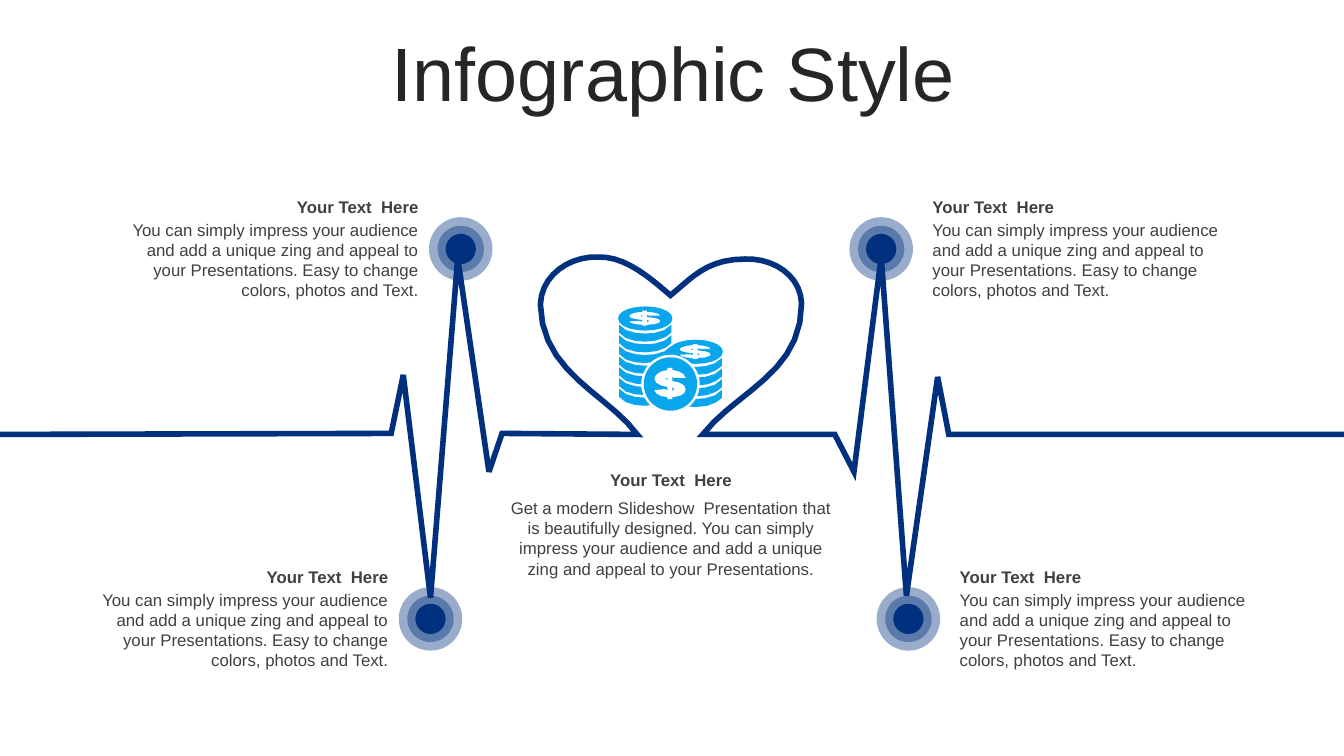
from dataclasses import dataclass

from lxml.etree import SubElement
from pptx import Presentation
from pptx.dml.color import RGBColor
from pptx.enum.shapes import MSO_SHAPE
from pptx.enum.text import MSO_ANCHOR, MSO_AUTO_SIZE, PP_ALIGN
from pptx.oxml.ns import qn
from pptx.util import Inches, Pt


@dataclass(frozen=True)
class Theme:
    """Colours, font and type sizes of the slide."""
    navy: RGBColor = RGBColor(0x00, 0x30, 0x7E)
    sky: RGBColor = RGBColor(0x0A, 0xA6, 0xED)
    white: RGBColor = RGBColor(0xFF, 0xFF, 0xFF)
    title: RGBColor = RGBColor(0x26, 0x26, 0x26)
    text: RGBColor = RGBColor(0x40, 0x40, 0x40)
    font: str = "Arial"
    title_size: int = 54
    text_size: int = 12
    pulse_width: int = 4


T = Theme()
HEADING = "Your Text  Here"
NOTE = ("You can simply impress your audience and add a unique zing and appeal "
        "to your Presentations. Easy to change colors, photos and Text.")
SUMMARY = ("Get a modern Slideshow  Presentation that is beautifully designed. "
           "You can simply impress your audience and add a unique zing and appeal "
           "to your Presentations.")

PULSE = [
    (-0.01, 4.31), (3.88, 4.3), (4, 3.72), (4.27, 5.93), (4.54, 2.56),
    (4.85, 4.68), (4.98, 4.3), (6.32, 4.31),
    (6.03, 3.91, 5.37, 3.7, 5.36, 3.02), (5.37, 2.72, 5.66, 2.54, 5.93, 2.55),
    (6.21, 2.54, 6.46, 2.77, 6.65, 2.93), (6.85, 2.77, 7, 2.57, 7.39, 2.57),
    (7.67, 2.56, 7.94, 2.73, 7.95, 3.01), (7.95, 3.7, 7.31, 3.88, 6.97, 4.31),
    (8.28, 4.31), (8.47, 4.68), (8.74, 2.55), (8.99, 5.91), (9.3, 3.74),
    (9.41, 4.31), (13.33, 4.31),
]
RIM = [
    (-0.26, 0), (-0.21, 0.07, -0.09, 0.09, 0, 0.09),
    (0.09, 0.09, 0.21, 0.07, 0.26, 0), (0.26, 0.08),
    (0.21, 0.13, 0.13, 0.17, 0, 0.17), (-0.1, 0.17, -0.21, 0.15, -0.26, 0.08),
]
COIN_TOP = [
    (0, -0.12), (0.15, -0.12, 0.27, -0.07, 0.27, 0), (0.27, 0.07, 0.15, 0.12, 0, 0.12),
    (-0.15, 0.12, -0.27, 0.07, -0.27, 0), (-0.27, -0.07, -0.15, -0.12, 0, -0.12),
]
DOLLAR = [
    [(-0.03, -0.16), (-0.03, -0.14), (-0.11, -0.13, -0.16, -0.09, -0.16, -0.05),
     (-0.16, -0.01, -0.1, 0.02, -0.03, 0.03), (-0.03, 0.07), (-0.05, 0.05),
     (-0.16, 0.06), (-0.16, 0.09, -0.1, 0.13, -0.03, 0.13), (-0.03, 0.15),
     (0.02, 0.15), (0.02, 0.13), (0.1, 0.13, 0.16, 0.09, 0.15, 0.05),
     (0.15, 0.01, 0.1, -0.02, 0.02, -0.03), (0.02, -0.07), (0.04, -0.06),
     (0.15, -0.06), (0.15, -0.1, 0.09, -0.13, 0.02, -0.14), (0.02, -0.16)],
    [(-0.03, -0.07), (-0.03, -0.04), (-0.05, -0.05)],
    [(0.02, 0.03), (0.04, 0.05), (0.02, 0.07)],
]


def flatten(contour, steps):
    """Turn line ends and cubic curves into a list of points."""
    points = []
    for step in contour:
        if len(step) == 2:
            points.append(step)
            continue
        (x0, y0), (x1, y1, x2, y2, x3, y3) = points[-1], step
        for i in range(1, steps + 1):
            t = i / steps
            a, b, c, d = (1 - t) ** 3, 3 * t * (1 - t) ** 2, 3 * t * t * (1 - t), t ** 3
            points.append((a * x0 + b * x1 + c * x2 + d * x3,
                           a * y0 + b * y1 + c * y2 + d * y3))
    return points


def shift(points, dy=0, squash=1):
    """Squash points upright and move them down."""
    return [(x, y * squash + dy) for x, y in points]


def add_outline(slide, contours, x=0, y=0, close=True):
    """Add one freeform made of point lists placed around a point."""
    builder = None
    for contour in contours:
        points = [(Inches(x + px), Inches(y + py)) for px, py in contour]
        if builder is None:
            builder = slide.shapes.build_freeform(*points[0], scale=1.0)
        else:
            builder.move_to(*points[0])
        builder.add_line_segments(points[1:], close=close)
    sp = builder.convert_to_shape()
    sp.shadow.inherit = False
    return sp


def paint(sp, color, alpha=None):
    """Give a shape a plain fill without a line."""
    sp.fill.solid()
    sp.fill.fore_color.rgb = color
    sp.line.fill.background()
    if alpha is not None:
        clr = sp.fill._xPr.find(qn("a:solidFill"))[0]
        SubElement(clr, qn("a:alpha")).set("val", str(alpha * 1000))


def add_disc(slide, cx, cy, size, color, alpha=None):
    """Add a filled circle around a centre."""
    sp = slide.shapes.add_shape(MSO_SHAPE.OVAL, Inches(cx - size / 2),
                                Inches(cy - size / 2), Inches(size), Inches(size))
    sp.shadow.inherit = False
    paint(sp, color, alpha)


def add_run(p, text, size, color, bold=False):
    """Add one formatted run to a paragraph."""
    r = p.add_run()
    r.text = text
    r.font.name, r.font.size, r.font.bold = T.font, Pt(size), bold
    r.font.color.rgb = color


def add_title(slide, x, y, w, h):
    """Fill and place the title placeholder."""
    sp = slide.shapes.title
    sp.left, sp.top, sp.width, sp.height = (Inches(v) for v in (x, y, w, h))
    tf = sp.text_frame
    tf.auto_size = MSO_AUTO_SIZE.NONE
    tf.vertical_anchor = MSO_ANCHOR.MIDDLE
    p = tf.paragraphs[0]
    p.alignment, p.line_spacing = PP_ALIGN.CENTER, 0.9
    add_run(p, "Infographic Style", T.title_size, T.title)


def add_pulse(slide):
    """Draw the heartbeat line with the heart in its middle."""
    sp = add_outline(slide, [flatten(PULSE, 10)], close=False)
    sp.fill.background()
    sp.line.color.rgb = T.navy
    sp.line.width = Pt(T.pulse_width)
    SubElement(sp.line._get_or_add_ln(), qn("a:miter")).set("lim", "800000")


def add_text_block(slide, x, y, w, align, body, gap=0.23):
    """Add a bold heading with its body text below."""
    for text, top, h, bold in ((body, y + gap, 0.91, False), (HEADING, y, 0.3, True)):
        box = slide.shapes.add_textbox(Inches(x), Inches(top), Inches(w), Inches(h))
        tf = box.text_frame
        tf.word_wrap = True
        p = tf.paragraphs[0]
        p.alignment = align
        add_run(p, text, T.text_size, T.text, bold)


def add_target(slide, cx, cy):
    """Draw the three rings at a tip of the pulse."""
    for size, alpha in ((0.63, 40), (0.46, 40), (0.3, None)):
        add_disc(slide, cx, cy, size, T.navy, alpha)


def add_coin_stack(slide, cx, cy, coins, dollar):
    """Draw a top coin with the rims of the coins below it."""
    rim = flatten(RIM, 3)
    contours = [flatten(COIN_TOP, 5)]
    contours += [shift(part, squash=0.48) for part in dollar]
    contours += [shift(rim, 0.06 + i * 0.106) for i in range(coins)]
    paint(add_outline(slide, contours, cx, cy), T.sky)


def add_coins(slide, x, y):
    """Draw two coin stacks and a front coin from a top left corner."""
    dollar = [flatten(part, 3) for part in DOLLAR]
    add_coin_stack(slide, x + 0.27, y + 0.12, 7, dollar)
    add_coin_stack(slide, x + 0.77, y + 0.45, 4, dollar)
    for size, color in ((0.58, T.white), (0.53, T.sky)):
        add_disc(slide, x + 0.52, y + 0.77, size, color)
    paint(add_outline(slide, dollar, x + 0.52, y + 0.77), T.white)


def main():
    """Build and save the slide."""
    prs = Presentation()
    prs.slide_width, prs.slide_height = Inches(13.33), Inches(7.5)
    slide = prs.slides.add_slide(prs.slide_layouts[5])
    add_title(slide, 0.35, 0.37, 12.66, 0.79)
    add_pulse(slide)
    add_text_block(slide, 4.96, 4.61, 3.39, PP_ALIGN.CENTER, SUMMARY, 0.28)
    for x, y, align, cx in ((1.14, 1.9, PP_ALIGN.RIGHT, 4.57),
                            (0.84, 5.57, PP_ALIGN.RIGHT, 4.27),
                            (9.15, 1.9, PP_ALIGN.LEFT, 8.74),
                            (9.42, 5.57, PP_ALIGN.LEFT, 9.01)):
        add_text_block(slide, x, y, 3.11, align, NOTE)
        add_target(slide, cx, y + 0.57)
    add_coins(slide, 6.13, 3.04)
    prs.save("out.pptx")


if __name__ == "__main__":
    main()
